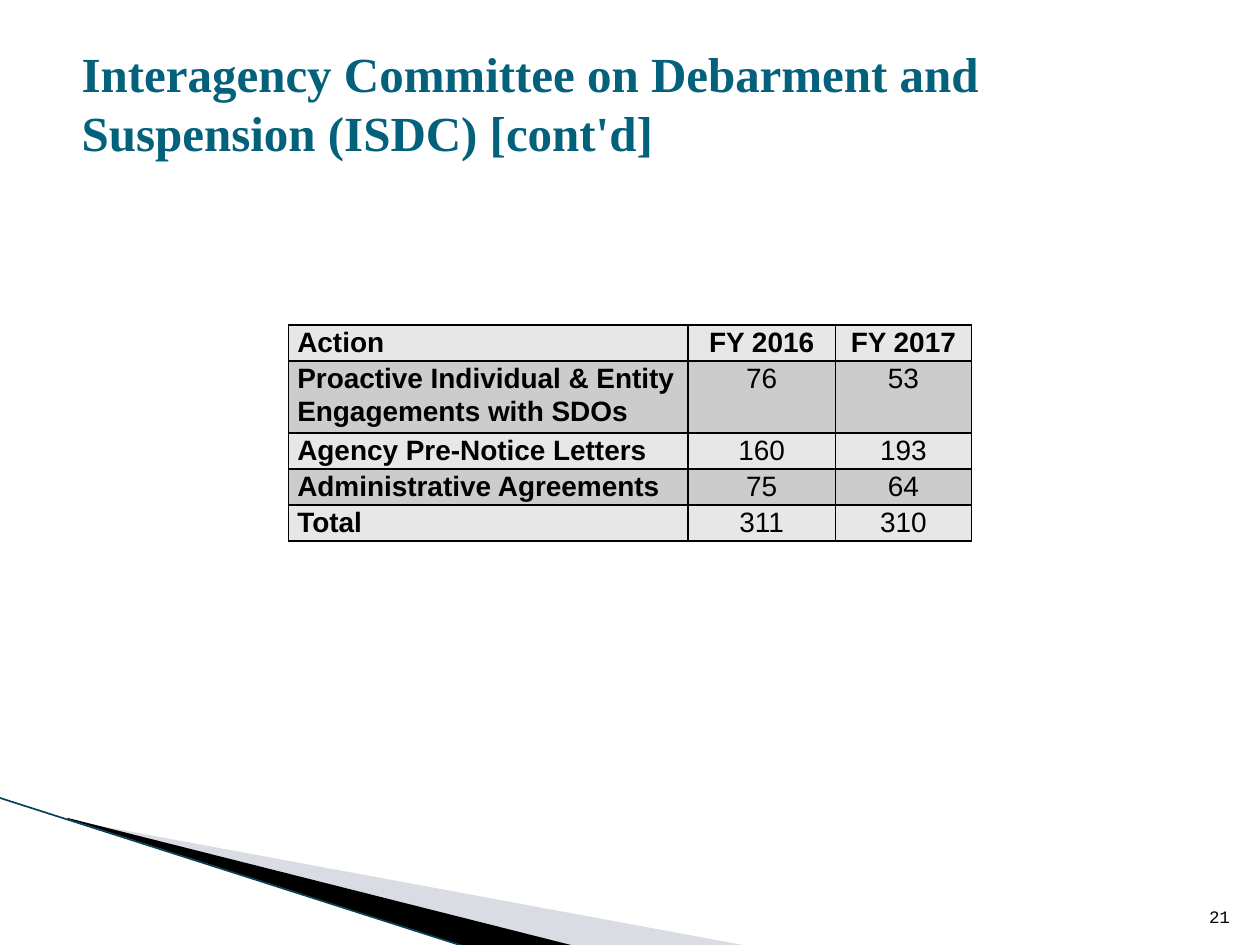
from lxml.etree import SubElement
from pptx import Presentation
from pptx.dml.color import RGBColor
from pptx.enum.shapes import MSO_CONNECTOR
from pptx.enum.text import MSO_ANCHOR, PP_ALIGN
from pptx.oxml.ns import qn
from pptx.util import Inches, Pt


def color(code):
    return RGBColor.from_string(code)


def write(frame, text, font="Arial", size=16, ink="000000", bold=False,
          align=PP_ALIGN.LEFT, spacing=None):
    for index, line in enumerate(text.split("\n")):
        paragraph = frame.paragraphs[0] if index == 0 else frame.add_paragraph()
        paragraph.alignment = align
        paragraph.line_spacing = spacing
        run = paragraph.add_run()
        run.text = line
        run.font.name = font
        run.font.size = Pt(size)
        run.font.bold = bold
        run.font.color.rgb = color(ink)


class SlideBuilder:
    ink = "000000"
    bands = ("E7E7E7", "CCCCCC")

    def __init__(self, slide):
        self.slide = slide

    def wedge(self, points, fill, opacity=100):
        corners = [(Inches(x), Inches(y)) for x, y in points]
        builder = self.slide.shapes.build_freeform(*corners[0])
        builder.add_line_segments(corners[1:], close=True)
        shape = builder.convert_to_shape()
        shape.shadow.inherit = False
        shape.fill.solid()
        shape.fill.fore_color.rgb = color(fill)
        shape.line.fill.background()
        if opacity < 100:
            tint = shape.fill._xPr.find(qn("a:solidFill"))[0]
            SubElement(tint, qn("a:alpha"), val=str(opacity * 1000))

    def line(self, start, end, ink, width):
        x1, y1, x2, y2 = map(Inches, start + end)
        edge = self.slide.shapes.add_connector(MSO_CONNECTOR.STRAIGHT, x1, y1, x2, y2)
        edge.line.color.rgb = color(ink)
        edge.line.width = Pt(width)
        SubElement(edge._element.spPr, qn("a:effectLst"))

    def text(self, box, text, anchor, **style):
        frame = self.slide.shapes.add_textbox(*map(Inches, box)).text_frame
        frame.word_wrap = True
        frame.vertical_anchor = anchor
        write(frame, text, **style)

    def border(self, cell):
        properties = cell._tc.get_or_add_tcPr()
        for index, side in enumerate(("lnL", "lnR", "lnT", "lnB")):
            edge = properties.makeelement(qn(f"a:{side}"), {"w": str(Pt(1))})
            fill = SubElement(edge, qn("a:solidFill"))
            SubElement(fill, qn("a:srgbClr"), val=self.ink)
            properties.insert(index, edge)

    def table(self, box, rows, widths, heights):
        table = self.slide.shapes.add_table(
            len(rows), len(widths), *map(Inches, box)).table
        for column, width in zip(table.columns, widths):
            column.width = Inches(width)
        for row, height in zip(table.rows, heights):
            row.height = Inches(height)
        for r, values in enumerate(rows):
            for c, value in enumerate(values):
                cell = table.cell(r, c)
                cell.margin_left = cell.margin_right = Inches(0.07)
                cell.margin_top = cell.margin_bottom = 0
                cell.fill.solid()
                cell.fill.fore_color.rgb = color(self.bands[r % 2])
                self.border(cell)
                write(cell.text_frame, value, ink=self.ink, spacing=1.07,
                      bold=r == 0 or c == 0,
                      align=PP_ALIGN.CENTER if c else PP_ALIGN.LEFT)


def main():
    presentation = Presentation()
    presentation.slide_width = Inches(10)
    presentation.slide_height = Inches(7.5)
    page = SlideBuilder(presentation.slides.add_slide(presentation.slide_layouts[6]))

    page.wedge([(0.55, 6.51), (5.95, 7.51), (4.56, 7.51), (0.55, 6.5)], "A0ACB9", 40)
    page.wedge([(0.53, 6.49), (4.57, 7.51), (3.72, 7.52), (0.54, 6.5)], "000000")
    page.line((-0.01, 6.33), (3.71, 7.52), "0B4059", 0.95)

    page.text((0.55, 0.32, 9.25, 0.98),
              "Interagency Committee on Debarment and Suspension (ISDC) [cont'd]",
              MSO_ANCHOR.MIDDLE, font="Times New Roman", size=28,
              ink="04617B", bold=True)
    page.text((9.46, 7.01, 0.4, 0.4), "21", MSO_ANCHOR.BOTTOM,
              font="Courier New", size=10, align=PP_ALIGN.RIGHT)

    actions = [
        ("Action", "FY 2016", "FY 2017"),
        ("Proactive Individual & Entity\nEngagements with SDOs", "76", "53"),
        ("Agency Pre-Notice Letters", "160", "193"),
        ("Administrative Agreements", "75", "64"),
        ("Total", "311", "310"),
    ]
    page.table((2.29, 2.58, 5.42, 1.56), actions,
               widths=(3.17, 1.17, 1.08), heights=(0.26, 0.52, 0.26, 0.26, 0.26))

    presentation.save("out.pptx")


if __name__ == "__main__":
    main()
